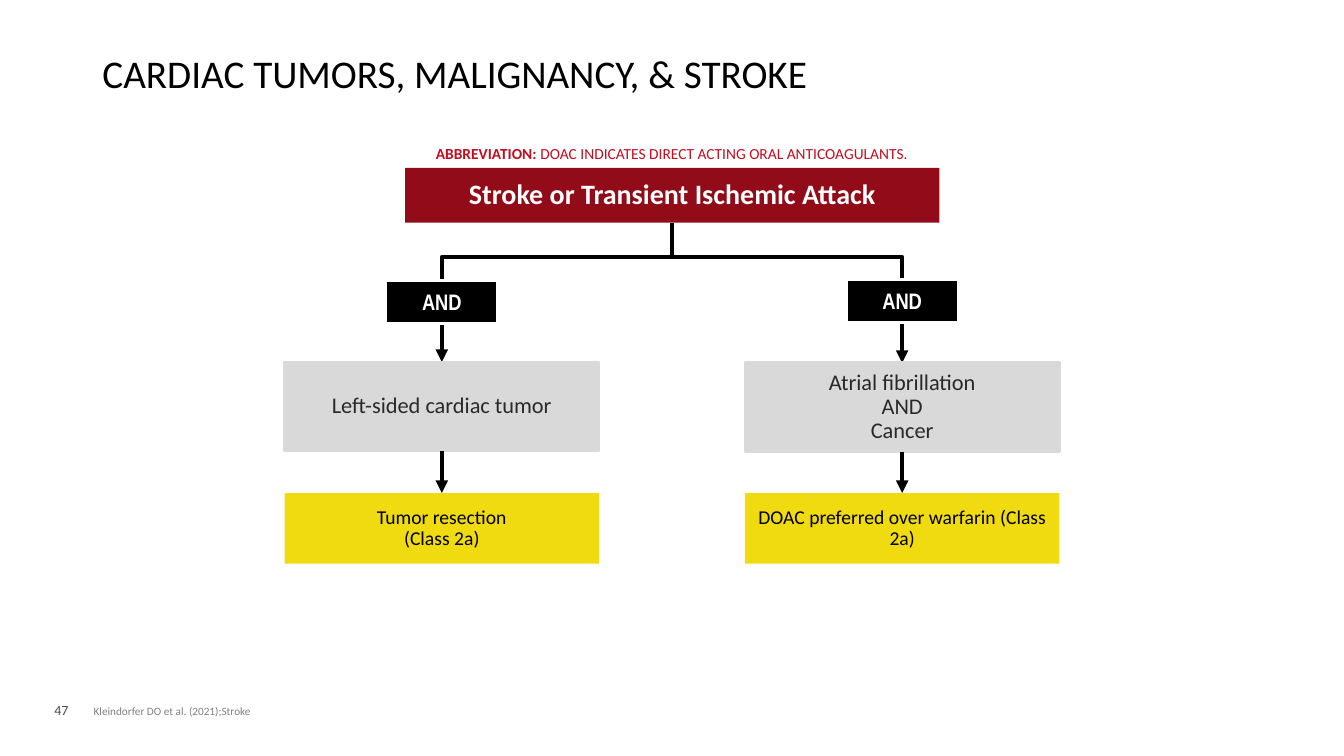
from lxml.etree import SubElement
from pptx import Presentation
from pptx.dml.color import RGBColor
from pptx.enum.shapes import MSO_CONNECTOR, MSO_SHAPE
from pptx.enum.text import MSO_ANCHOR, MSO_AUTO_SIZE, PP_ALIGN
from pptx.oxml.ns import qn
from pptx.util import Inches, Pt

COLORS = {
    "black": "000000", "white": "FFFFFF", "crimson": "910B18", "red": "C10E20",
    "grey": "D9D9D9", "yellow": "F0DB10", "charcoal": "292929",
    "number": "4D4D4F", "citation": "808080",
}
COLUMNS, ROWS = 160, 90
CELL = Inches(1 / 12)


def color(name):
    return RGBColor.from_string(COLORS[name])


def write(frame, text, size=16, ink="black", font="Calibri", bold=False, lead="",
          align=PP_ALIGN.CENTER, anchor=MSO_ANCHOR.MIDDLE, spacing=0.9, inset=True, wrap=True):
    frame.auto_size = MSO_AUTO_SIZE.NONE
    frame.word_wrap = wrap
    frame.vertical_anchor = anchor
    if not inset:
        frame.margin_left = frame.margin_right = frame.margin_top = frame.margin_bottom = 0
    for index, wording in enumerate(text.split("\n")):
        paragraph = frame.add_paragraph() if index else frame.paragraphs[0]
        paragraph.alignment = align
        paragraph.line_spacing = spacing
        parts = [(lead, True), (wording, bold)] if lead else [(wording, bold)]
        for part, weight in parts:
            run = paragraph.add_run()
            run.text = part
            run.font.name, run.font.size, run.font.bold = font, Pt(size), weight
            run.font.color.rgb = color(ink)


class FlowSlide:
    """Draws a flow chart on a slide measured in grid columns and rows."""

    def __init__(self, deck):
        self.slide = deck.slides.add_slide(deck.slide_layouts[5])
        self.shapes = self.slide.shapes

    def cells(self, *lengths):
        return [round(length * CELL) for length in lengths]

    def title(self, text, *place):
        heading = self.shapes.title
        heading.left, heading.top, heading.width, heading.height = self.cells(*place)
        write(heading.text_frame, text, size=28, align=PP_ALIGN.LEFT, anchor=MSO_ANCHOR.BOTTOM)

    def label(self, text, *place, **style):
        note = self.shapes.add_textbox(*self.cells(*place))
        write(note.text_frame, text, anchor=MSO_ANCHOR.TOP, **style)

    def box(self, text, center, top, width, height, fill, border=None, **style):
        place = self.cells(center - width / 2, top, width, height)
        step = self.shapes.add_shape(MSO_SHAPE.RECTANGLE, *place)
        step.shadow.inherit = False
        step.fill.solid()
        step.fill.fore_color.rgb = color(fill)
        if border:
            step.line.color.rgb = color(border)
            step.line.width = Pt(2)
        else:
            step.line.fill.background()
        write(step.text_frame, text, inset=False, **style)
        return step

    def stroke(self, line, arrow_end):
        line.line.color.rgb = color("black")
        line.line.width = Pt(3)
        properties = line.element.spPr
        SubElement(properties.find(qn("a:ln")), qn(f"a:{arrow_end}"), type="triangle")
        if properties.find(qn("a:effectLst")) is None:
            SubElement(properties, qn("a:effectLst"))

    def arrow(self, source, target):
        link = self.shapes.add_connector(MSO_CONNECTOR.STRAIGHT, 0, 0, 0, 0)
        link.begin_connect(source, 2)
        link.end_connect(target, 0)
        self.stroke(link, "tailEnd")

    def elbow(self, x, y, root_x, root_y, bend):
        middle_x, middle_y = (x + root_x) / 2, (y + root_y) / 2
        half_rise, half_run = (y - root_y) / 2, (root_x - x) / 2
        link = self.shapes.add_connector(MSO_CONNECTOR.ELBOW, *self.cells(
            middle_x + half_rise, middle_y + half_run,
            middle_x - half_rise, middle_y - half_run))
        properties = link.element.spPr
        properties.find(qn("a:xfrm")).set("rot", "5400000")
        guides = properties.find(qn("a:prstGeom")).get_or_add_avLst()
        share = round((y - bend) / (y - root_y) * 100000)
        SubElement(guides, qn("a:gd"), name="adj1", fmla=f"val {share}")
        self.stroke(link, "headEnd")

    def branch(self, *points):
        start, *rest = [self.cells(*point) for point in points]
        outline = self.shapes.build_freeform(*start)
        outline.add_line_segments(rest, close=False)
        path = outline.convert_to_shape()
        path.shadow.inherit = False
        path.fill.background()
        self.stroke(path, "headEnd")


def main():
    deck = Presentation()
    deck.slide_width, deck.slide_height = COLUMNS * CELL, ROWS * CELL
    flow = FlowSlide(deck)
    root_x, root_top, root_height, bend = 80.04, 20, 6.5, 30.6
    left_x, right_x = 52.6, 107.4
    left_top, right_top = 43.1, 43.2

    flow.title("CARDIAC TUMORS, MALIGNANCY, & STROKE", 11, 4.8, 138, 7.3)
    flow.label("DOAC INDICATES DIRECT ACTING ORAL ANTICOAGULANTS.", 11, 16.8, 138, 3.2,
               lead="ABBREVIATION: ", size=11, ink="red")
    flow.branch((right_x, right_top), (right_x, bend), (root_x, bend))
    flow.elbow(left_x, left_top, root_x, root_top + root_height, bend)
    flow.box("Stroke or Transient Ischemic Attack", root_x, root_top, 63.6, root_height,
             "crimson", size=20, ink="white", bold=True)

    pathways = [
        (left_x, 33.36, left_top, "Left-sided cardiac tumor", "Tumor resection\n(Class 2a)"),
        (right_x, 33.24, right_top, "Atrial fibrillation\nAND\nCancer",
         "DOAC preferred over warfarin (Class 2a)"),
    ]
    for center, badge_top, condition_top, condition, treatment in pathways:
        flow.box("AND", center, badge_top, 13.3, 5.16, "black", "white",
                 ink="white", font="Arial Narrow", bold=True, spacing=1)
        finding = flow.box(condition, center, condition_top, 37.44, 10.6, "grey", "grey",
                           ink="charcoal")
        therapy = flow.box(treatment, center, 58.7, 37.44, 8.4, "yellow", size=14)
        flow.arrow(finding, therapy)

    flow.label("47", 5.28, 82.9, 4.7, 3.2, size=10, ink="number",
               align=PP_ALIGN.LEFT, spacing=1, wrap=False)
    flow.label("Kleindorfer DO et al. (2021);Stroke", 11.15, 83.8, 112.5, 1.6, size=8,
               ink="citation", align=PP_ALIGN.LEFT, spacing=1, inset=False)
    deck.save("out.pptx")


if __name__ == "__main__":
    main()
